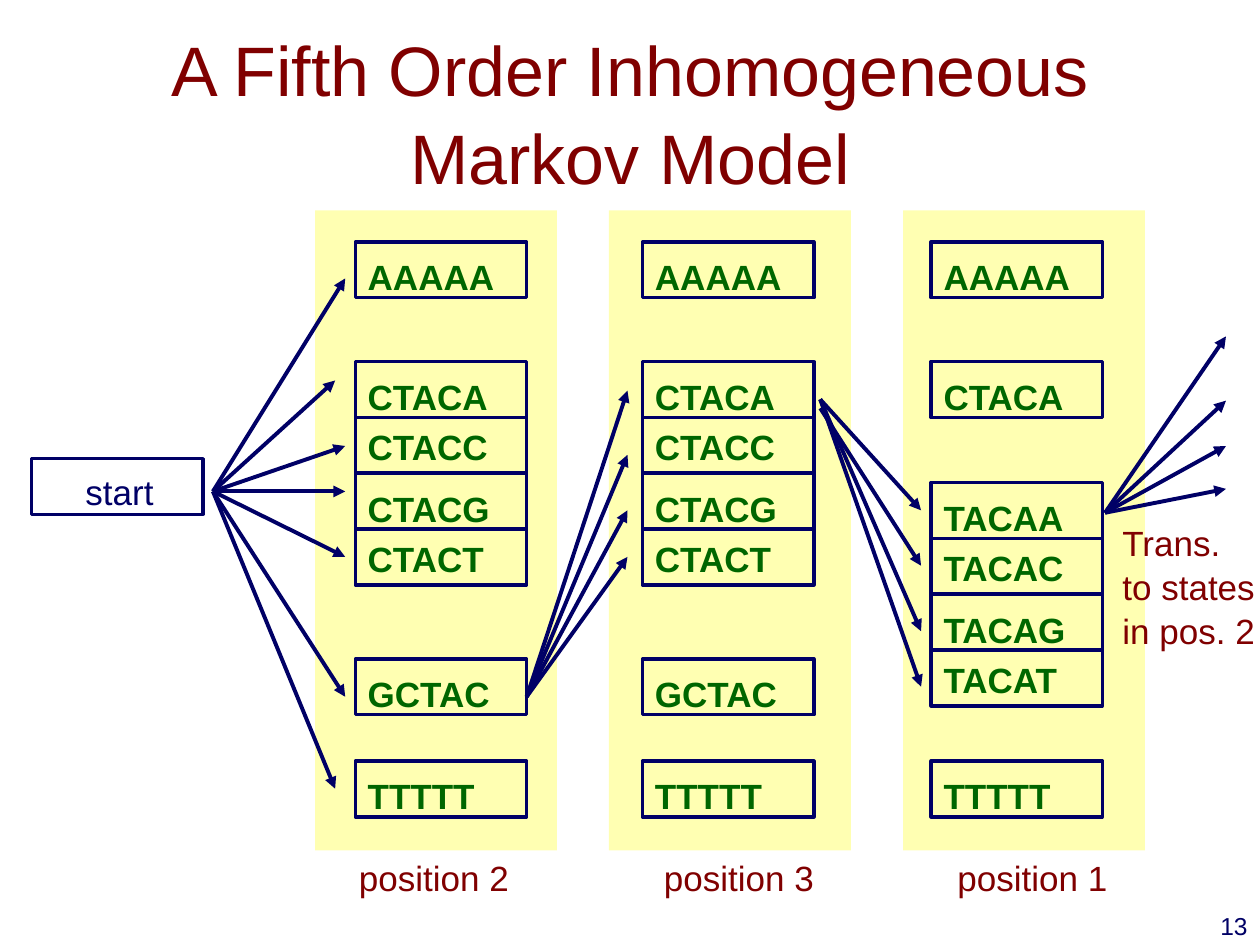
from lxml import etree
from pptx import Presentation
from pptx import util as u
from pptx.dml.color import RGBColor
from pptx.enum import shapes, text
from pptx.oxml import ns

COLUMNS, ROWS = 100, 75
NAVY, MAROON, GREEN, YELLOW = "000066", "800000", "006600", "FFFF00"
BOX_WIDTH, BOX_HEIGHT, TEXT_HEIGHT = 13.6, 4.43, 4.3


def color(value):
    return RGBColor.from_string(value)


def write_text(frame, content, size=20, hue=MAROON, bold=False,
               align=text.PP_ALIGN.LEFT, anchor=text.MSO_ANCHOR.TOP, wrap=True):
    frame.text = content
    frame.word_wrap = wrap
    frame.auto_size = text.MSO_AUTO_SIZE.NONE
    frame.vertical_anchor = anchor
    for paragraph in frame.paragraphs:
        paragraph.alignment = align
        paragraph.line_spacing = 1.05
        for run in paragraph.runs:
            run.font.name = "Arial"
            run.font.size = u.Pt(size)
            run.font.bold = bold
            run.font.color.rgb = color(hue)


class Diagram:
    def __init__(self):
        self.presentation = Presentation()
        self.presentation.slide_width = u.Inches(10)
        self.presentation.slide_height = u.Inches(7.5)
        self.slide = self.presentation.slides.add_slide(self.presentation.slide_layouts[5])

    def place(self, column, row):
        return (int(self.presentation.slide_width * column / COLUMNS),
                int(self.presentation.slide_height * row / ROWS))

    def area(self, column, row, width, height):
        return self.place(column, row) + self.place(width, height)

    def title(self, content):
        shape = self.slide.shapes.title
        shape.left, shape.top, shape.width, shape.height = self.area(7.5, 2.5, 85, 12.5)
        write_text(shape.text_frame, content, size=40,
                   align=text.PP_ALIGN.CENTER, anchor=text.MSO_ANCHOR.MIDDLE)

    def rectangle(self, area, parent=None):
        owner = parent or self.slide
        shape = owner.shapes.add_shape(shapes.MSO_SHAPE.RECTANGLE, *self.area(*area))
        shape.shadow.inherit = False
        return shape

    def panel(self, *area):
        shape = self.rectangle(area)
        shape.line.fill.background()
        shape.fill.solid()
        shape.fill.fore_color.rgb = color(YELLOW)
        tint = shape.fill._xPr.find(".//" + ns.qn("a:srgbClr"))
        etree.SubElement(tint, ns.qn("a:alpha"), val="30000")

    def box(self, column, row, parent=None):
        shape = self.rectangle((column, row, BOX_WIDTH, BOX_HEIGHT), parent)
        shape.fill.background()
        shape.line.color.rgb = color(NAVY)
        shape.line.width = u.Pt(2)

    def label(self, content, area, parent=None, **style):
        owner = parent or self.slide
        shape = owner.shapes.add_textbox(*self.area(*area))
        write_text(shape.text_frame, content, **style)

    def states(self, column, stacks):
        group = self.slide.shapes.add_group_shape()
        for top, names in stacks:
            for index, name in enumerate(names):
                row = top + index * BOX_HEIGHT
                drop = 0 if index % 2 else 0.45
                self.label(name, (column, row + drop, BOX_WIDTH, TEXT_HEIGHT), group,
                           hue=GREEN, bold=True)
                self.box(column, row, group)

    def arrow(self, start, end):
        connector = self.slide.shapes.add_connector(
            shapes.MSO_CONNECTOR.STRAIGHT, *self.place(*start), *self.place(*end))
        connector.line.color.rgb = color(NAVY)
        connector.line.width = u.Pt(2.25)
        line = connector.line._get_or_add_ln()
        etree.SubElement(line, ns.qn("a:tailEnd"), type="triangle")
        etree.SubElement(connector._element.spPr, ns.qn("a:effectLst"))

    def fan(self, start, ends):
        for end in ends:
            self.arrow(start, end)


def main():
    diagram = Diagram()
    codons = ["CTACA", "CTACC", "CTACG", "CTACT"]
    ends = [(19.2, ["AAAAA"]), (60.4, ["TTTTT"])]
    shared = ends + [(28.7, codons), (52.3, ["GCTAC"])]
    last = ends + [(28.7, ["CTACA"]), (38.3, ["TACAA", "TACAC", "TACAG", "TACAT"])]
    positions = [
        ("position 2", 25, 28.2, 27.5, shared),
        ("position 3", 48.33, 51, 51.7, shared),
        ("position 1", 71.67, 73.9, 75, last),
    ]

    for _, panel_column, _, _, _ in positions:
        diagram.panel(panel_column, 16.7, 19.2, 50.8)
    diagram.title("A Fifth Order Inhomogeneous Markov Model")
    for name, _, state_column, label_column, stacks in positions:
        diagram.states(state_column, stacks)
        diagram.label(name, (label_column, 67.3, 13.9, TEXT_HEIGHT), wrap=False)

    diagram.box(2.5, 36.4)
    diagram.label("start", (5.8, 36.7, 7.4, TEXT_HEIGHT), hue=NAVY, wrap=False)
    diagram.label("Trans.\nto states\nin pos. 2", (88.1, 40.7, 12.6, 11.1), wrap=False)
    diagram.label("13", (79.2, 71.7, 20.8, 5), size=14, hue=NAVY,
                  align=text.PP_ALIGN.RIGHT)

    diagram.fan((16.9, 39), [(27.4, row) for row in (22.1, 35.4, 39, 44.2, 55.3)]
                + [(26.6, row) for row in (30.2, 62.6)])
    diagram.fan((41.8, 55.3), [(49.8, row) for row in (31, 36.1, 40.5, 44.2)])
    diagram.fan((65.1, 31.7), [(73.1, row) for row in (40.5, 50.1, 54.5)])
    diagram.arrow((65.1, 32.4), (73.1, 44.9))
    diagram.fan((87.7, 40.7), [(97.3, row) for row in (26.7, 31.8, 35.4, 38.8)])

    diagram.presentation.save("out.pptx")


if __name__ == "__main__":
    main()
